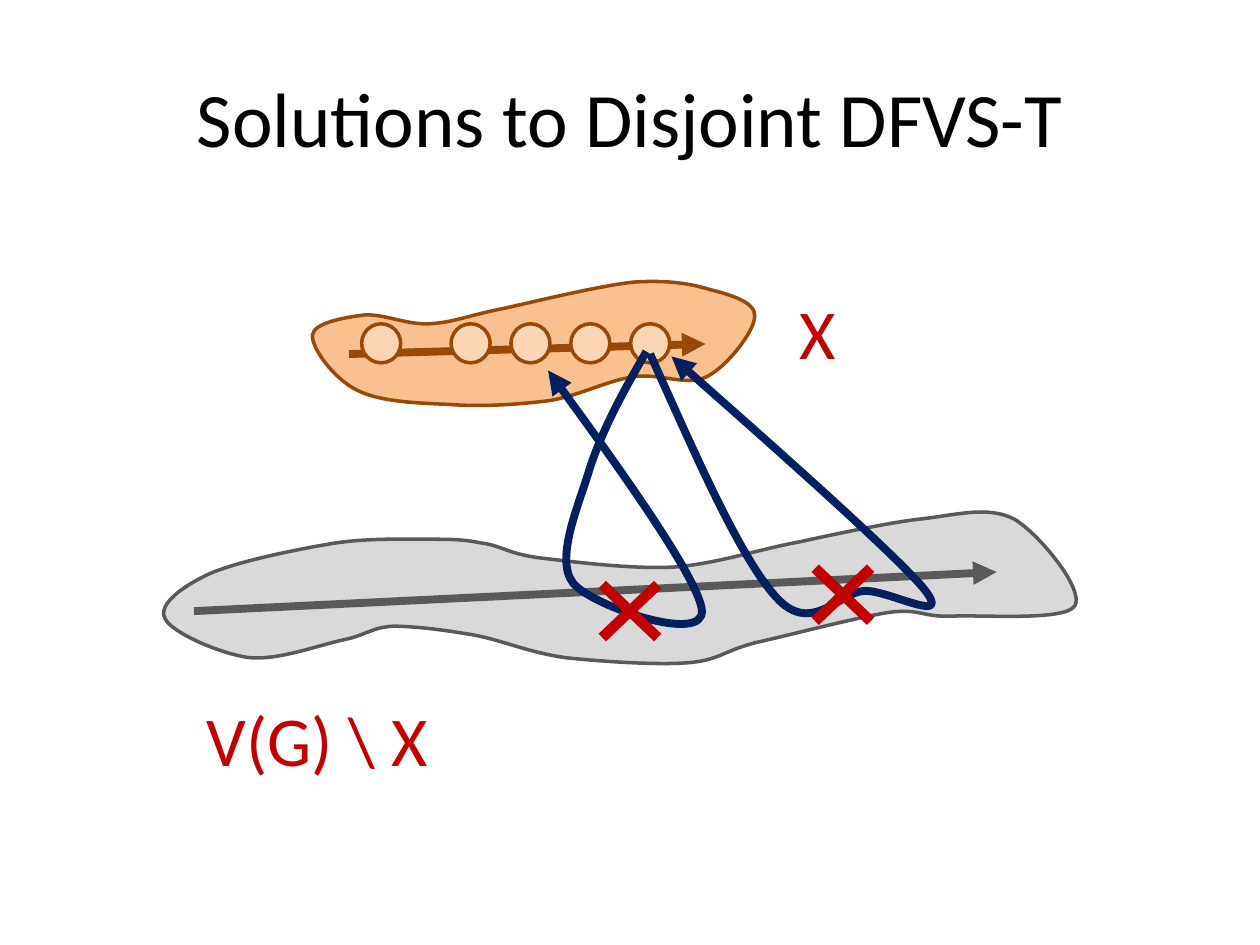
"""Build the slide on solutions to Disjoint DFVS-T."""
from lxml.etree import SubElement
from pptx import Presentation
from pptx.dml.color import RGBColor
from pptx.enum.shapes import MSO_CONNECTOR as CONN, MSO_SHAPE as SHAPE
from pptx.enum.text import MSO_ANCHOR as ANCHOR, MSO_AUTO_SIZE as AUTO, PP_ALIGN as ALIGN
from pptx.oxml.ns import qn
from pptx.util import Inches, Pt

TITLE = "Solutions to Disjoint DFVS-T"
LABELS = [("X", 6.25, 2.25, 0.49), ("V(G) \\ X", 1.54, 5.48, 1.98)]
RED, NAVY, GRAY, BROWN = "C00000", "002060", "595959", "984807"
LIGHT_GRAY, ORANGE, PEACH = "D9D9D9", "FAC090", "FCD5B5"

# Each curve is a start point followed by (control, control, end) triples.
REST_BLOB = [(4.3, 4.43),
             ((4.04, 4.4), (3.98, 4.33), (3.82, 4.31)),
             ((3.67, 4.28), (3.58, 4.28), (3.37, 4.28)),
             ((3.17, 4.28), (2.88, 4.27), (2.6, 4.32)),
             ((2.31, 4.37), (1.87, 4.46), (1.65, 4.56)),
             ((1.44, 4.66), (1.25, 4.8), (1.31, 4.91)),
             ((1.36, 5.02), (1.75, 5.19), (1.98, 5.22)),
             ((2.22, 5.24), (2.53, 5.12), (2.72, 5.08)),
             ((2.91, 5.04), (2.95, 4.98), (3.12, 4.97)),
             ((3.29, 4.97), (3.53, 5), (3.76, 5.04)),
             ((3.98, 5.08), (4.2, 5.18), (4.49, 5.22)),
             ((4.77, 5.25), (5.21, 5.28), (5.46, 5.26)),
             ((5.71, 5.24), (5.73, 5.17), (6, 5.1)),
             ((6.27, 5.04), (6.8, 4.9), (7.06, 4.86)),
             ((7.32, 4.83), (7.31, 4.9), (7.56, 4.89)),
             ((7.81, 4.88), (8.45, 4.93), (8.53, 4.81)),
             ((8.61, 4.68), (8.25, 4.24), (8.05, 4.12)),
             ((7.84, 4.01), (7.58, 4.09), (7.3, 4.12)),
             ((7.02, 4.15), (6.35, 4.3), (6.35, 4.3)),
             ((6.02, 4.36), (5.71, 4.47), (5.36, 4.5)),
             ((5.02, 4.52), (4.56, 4.46), (4.3, 4.43))]
X_BLOB = [(3.99, 2.45),
          ((3.73, 2.5), (3.6, 2.56), (3.41, 2.57)),
          ((3.23, 2.58), (3.05, 2.49), (2.89, 2.5)),
          ((2.74, 2.52), (2.49, 2.56), (2.48, 2.66)),
          ((2.47, 2.76), (2.65, 3.01), (2.84, 3.1)),
          ((3.02, 3.19), (3.32, 3.2), (3.57, 3.21)),
          ((3.83, 3.23), (4.12, 3.21), (4.36, 3.18)),
          ((4.6, 3.14), (4.82, 3.02), (5.03, 2.99)),
          ((5.24, 2.96), (5.45, 3.07), (5.61, 2.99)),
          ((5.77, 2.91), (5.99, 2.63), (5.99, 2.51)),
          ((6, 2.4), (5.8, 2.34), (5.64, 2.3)),
          ((5.48, 2.25), (5.29, 2.22), (5.02, 2.24)),
          ((4.75, 2.27), (4.26, 2.39), (3.99, 2.45))]
WALKS = [[(5.16, 2.81),
          ((5.52, 3.61), (5.87, 4.42), (6.16, 4.74)),
          ((6.44, 5.05), (6.66, 4.7), (6.86, 4.69)),
          ((7.05, 4.68), (7.58, 4.98), (7.33, 4.67)),
          ((7.07, 4.36), (5.33, 2.83), (5.33, 2.83))],
         [(5.13, 2.79),
          ((4.95, 3.1), (4.78, 3.41), (4.68, 3.72)),
          ((4.59, 4.02), (4.4, 4.44), (4.55, 4.63)),
          ((4.7, 4.81), (5.6, 5.12), (5.57, 4.84)),
          ((5.54, 4.56), (4.35, 2.94), (4.35, 2.94))]]
REST_ORDER = ((1.54, 4.85), (7.91, 4.54))
X_ORDER = ((2.77, 2.81), (5.6, 2.73))
VERTEX_LEFTS = [2.87] + [3.58 + 0.475 * i for i in range(4)]
VERTEX_TOP, VERTEX_SIZE = 2.57, 0.31
CROSSES = [(5, 4.85), (6.69, 4.72)]
CROSS_DX, CROSS_DY = 0.22, 0.21


def rgb(color):
    return RGBColor.from_string(color)


def style_line(s, color, width, arrow=False):
    s.line.color.rgb, s.line.width = rgb(color), Pt(width)
    if arrow:
        SubElement(s.line._get_or_add_ln(), qn("a:tailEnd"), type="triangle")


def style_shape(sp, fill, color, width, arrow=False):
    sp.shadow.inherit = False
    if fill:
        sp.fill.solid()
        sp.fill.fore_color.rgb = rgb(fill)
    else:
        sp.fill.background()
    style_line(sp, color, width, arrow)


def add_line(shapes, start, end, color, width, arrow=False):
    s = shapes.add_connector(CONN.STRAIGHT, *map(Inches, start + end))
    style_line(s, color, width, arrow)
    SubElement(s.element.spPr, qn("a:effectLst"))


def add_curve(shapes, curve, fill, color, width):
    start, *segments = curve
    builder = shapes.build_freeform(*map(Inches, start), scale=1.0)
    builder.add_line_segments([tuple(map(Inches, seg[-1])) for seg in segments], close=bool(fill))
    sp = builder.convert_to_shape()
    for step, seg in zip(list(sp.element.iter(qn("a:lnTo"))), segments):
        step.tag = qn("a:cubicBezTo")
        step.remove(step[0])
        for x, y in seg:
            SubElement(step, qn("a:pt"), x=str(Inches(x) - sp.left), y=str(Inches(y) - sp.top))
    style_shape(sp, fill, color, width, arrow=not fill)


def set_font(p, size, color):
    p.font.name, p.font.size, p.font.color.rgb = "Calibri", Pt(size), rgb(color)


def add_title(s):
    s.left, s.top, s.width, s.height = map(Inches, (0.5, 0.3, 9, 1.25))
    tf = s.text_frame
    tf.text, tf.vertical_anchor = TITLE, ANCHOR.MIDDLE
    tf.paragraphs[0].alignment = ALIGN.CENTER
    set_font(tf.paragraphs[0], 44, "000000")


def add_label(shapes, text, left, top, width):
    tf = shapes.add_textbox(*map(Inches, (left, top, width, 0.77))).text_frame
    tf.text, tf.word_wrap, tf.auto_size = text, False, AUTO.SHAPE_TO_FIT_TEXT
    set_font(tf.paragraphs[0], 40, RED)


def add_cross(shapes, x, y):
    for dy in (CROSS_DY, -CROSS_DY):
        add_line(shapes, (x + CROSS_DX, y + dy), (x - CROSS_DX, y - dy), RED, 6)


def main():
    prs = Presentation()
    prs.slide_width, prs.slide_height = Inches(10), Inches(7.5)
    shapes = prs.slides.add_slide(prs.slide_layouts[5]).shapes
    add_title(shapes.title)
    add_curve(shapes, REST_BLOB, LIGHT_GRAY, GRAY, 2)
    add_line(shapes, *REST_ORDER, GRAY, 4.5, arrow=True)
    add_curve(shapes, X_BLOB, ORANGE, BROWN, 2)
    add_line(shapes, *X_ORDER, BROWN, 4.5, arrow=True)
    for left in reversed(VERTEX_LEFTS):
        box = map(Inches, (left, VERTEX_TOP, VERTEX_SIZE, VERTEX_SIZE))
        style_shape(shapes.add_shape(SHAPE.OVAL, *box), PEACH, BROWN, 2)
    for walk in WALKS:
        add_curve(shapes, walk, None, NAVY, 4.5)
    for center in CROSSES:
        add_cross(shapes.add_group_shape().shapes, *center)
    for label in LABELS:
        add_label(shapes, *label)
    prs.save("out.pptx")


if __name__ == "__main__":
    main()
